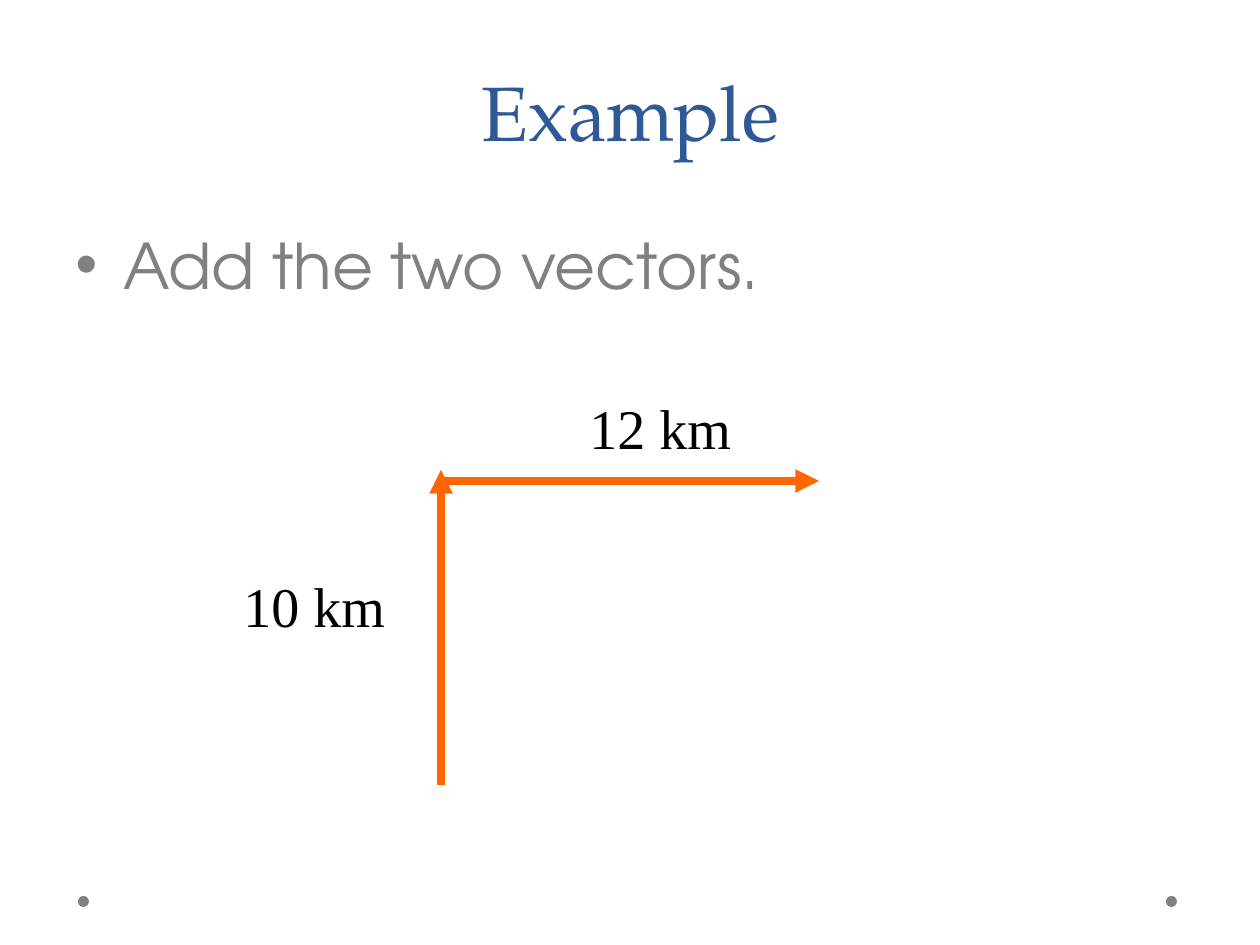
from dataclasses import dataclass

from lxml import etree
from pptx import Presentation
from pptx import util as u
from pptx.dml.color import RGBColor
from pptx.enum import shapes, text
from pptx.oxml.ns import qn

PX = u.Inches(1) / 126


@dataclass(frozen=True)
class Theme:
    title_color: str = "2F5897"
    body_color: str = "808080"
    label_color: str = "000000"
    vector_color: str = "FF6600"
    title_font: str = "TeX Gyre Pagella"
    body_font: str = "TeX Gyre Adventor"
    label_font: str = "Times New Roman"
    title_size: int = 44
    body_size: int = 36
    label_size: int = 32
    vector_width: float = 4.5


THEME = Theme()


def px(*lengths):
    return [u.Emu(round(length * PX)) for length in lengths]


def add_text(slide, box, words, font, size, color):
    frame = slide.shapes.add_textbox(*px(*box)).text_frame
    frame.word_wrap = True
    frame.text = words
    run_font = frame.paragraphs[0].runs[0].font
    run_font.name = font
    run_font.size = u.Pt(size)
    run_font.color.rgb = RGBColor.from_string(color)
    return frame


def set_space_before(paragraph, percent):
    """Set spacing relative to the text size, which python-pptx cannot."""
    properties = paragraph._p.get_or_add_pPr()
    spacing = etree.SubElement(properties, qn("a:spcBef"))
    etree.SubElement(spacing, qn("a:spcPct"), val=str(percent * 1000))


def add_title(slide, box, words):
    frame = add_text(slide, box, words, THEME.title_font, THEME.title_size, THEME.title_color)
    frame.vertical_anchor = text.MSO_ANCHOR.BOTTOM
    frame.paragraphs[0].alignment = text.PP_ALIGN.CENTER


def add_bullet(slide, box, words):
    frame = add_text(slide, box, words, THEME.body_font, THEME.body_size, THEME.body_color)
    paragraph = frame.paragraphs[0]
    set_space_before(paragraph, 20)
    properties = paragraph._p.get_or_add_pPr()
    indent = u.Inches(0.38)
    properties.set("marL", str(indent))
    properties.set("indent", str(-indent))
    etree.SubElement(properties, qn("a:buFont"), typeface="Arial")
    etree.SubElement(properties, qn("a:buChar"), char="•")


def add_vector(slide, start, end):
    connector = slide.shapes.add_connector(shapes.MSO_CONNECTOR.STRAIGHT, *px(*start, *end))
    connector.line.color.rgb = RGBColor.from_string(THEME.vector_color)
    connector.line.width = u.Pt(THEME.vector_width)
    etree.SubElement(connector.line._get_or_add_ln(), qn("a:tailEnd"), type="triangle")
    etree.SubElement(connector._element.spPr, qn("a:effectLst"))


def add_label(slide, box, words):
    frame = add_text(slide, box, words, THEME.label_font, THEME.label_size, THEME.label_color)
    frame.auto_size = text.MSO_AUTO_SIZE.SHAPE_TO_FIT_TEXT
    set_space_before(frame.paragraphs[0], 50)


def add_vector_diagram(slide, box):
    """Draw the northward and eastward vectors with their lengths."""
    left, top, width, height = box
    corner_x, corner_y = left + 210, top + 94
    add_vector(slide, (corner_x, top + height), (corner_x, corner_y - 11))
    add_vector(slide, (corner_x, corner_y), (left + width, corner_y))
    add_label(slide, (left + 346, top, 242, 79), "12 km")
    add_label(slide, (left, top + 178, 220, 79), "10 km")


def add_footer_dots(slide, box):
    left, top, width, height = box
    for dot_left in (left, left + width - height):
        dot = slide.shapes.add_shape(
            shapes.MSO_SHAPE.OVAL, *px(dot_left, top, height, height))
        dot.shadow.inherit = False
        dot.fill.solid()
        dot.fill.fore_color.rgb = RGBColor.from_string(THEME.body_color)
        dot.line.fill.background()


def main():
    presentation = Presentation()
    presentation.slide_width, presentation.slide_height = px(1260, 945)
    slide = presentation.slides.add_slide(presentation.slide_layouts[6])
    add_footer_dots(slide, (78, 896, 1099, 11))
    add_title(slide, (95, 5, 1071, 158), "Example")
    add_vector_diagram(slide, (231, 387, 588, 398))
    add_bullet(slide, (63, 220, 1134, 72), "Add the two vectors.")
    presentation.save("out.pptx")


if __name__ == "__main__":
    main()
